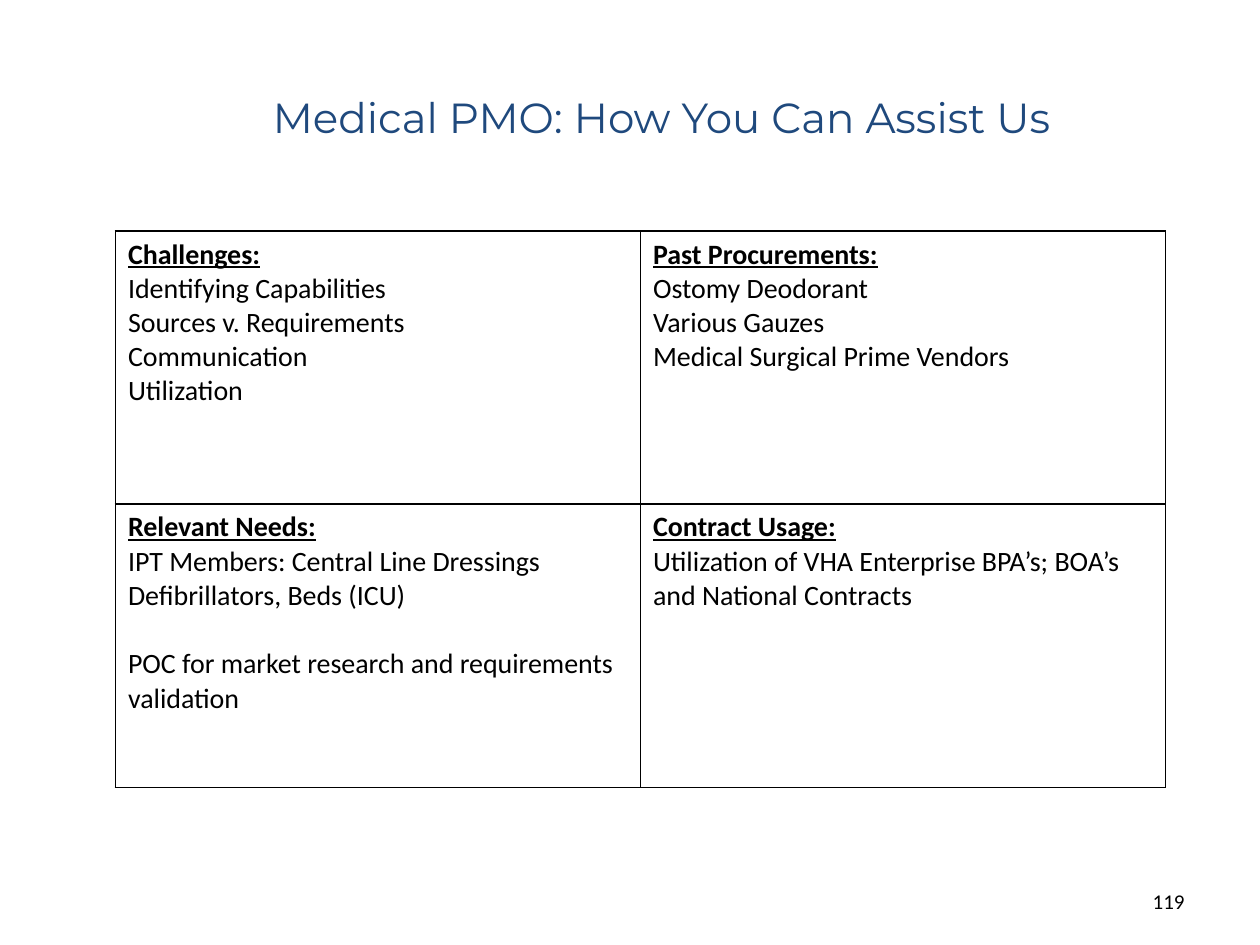
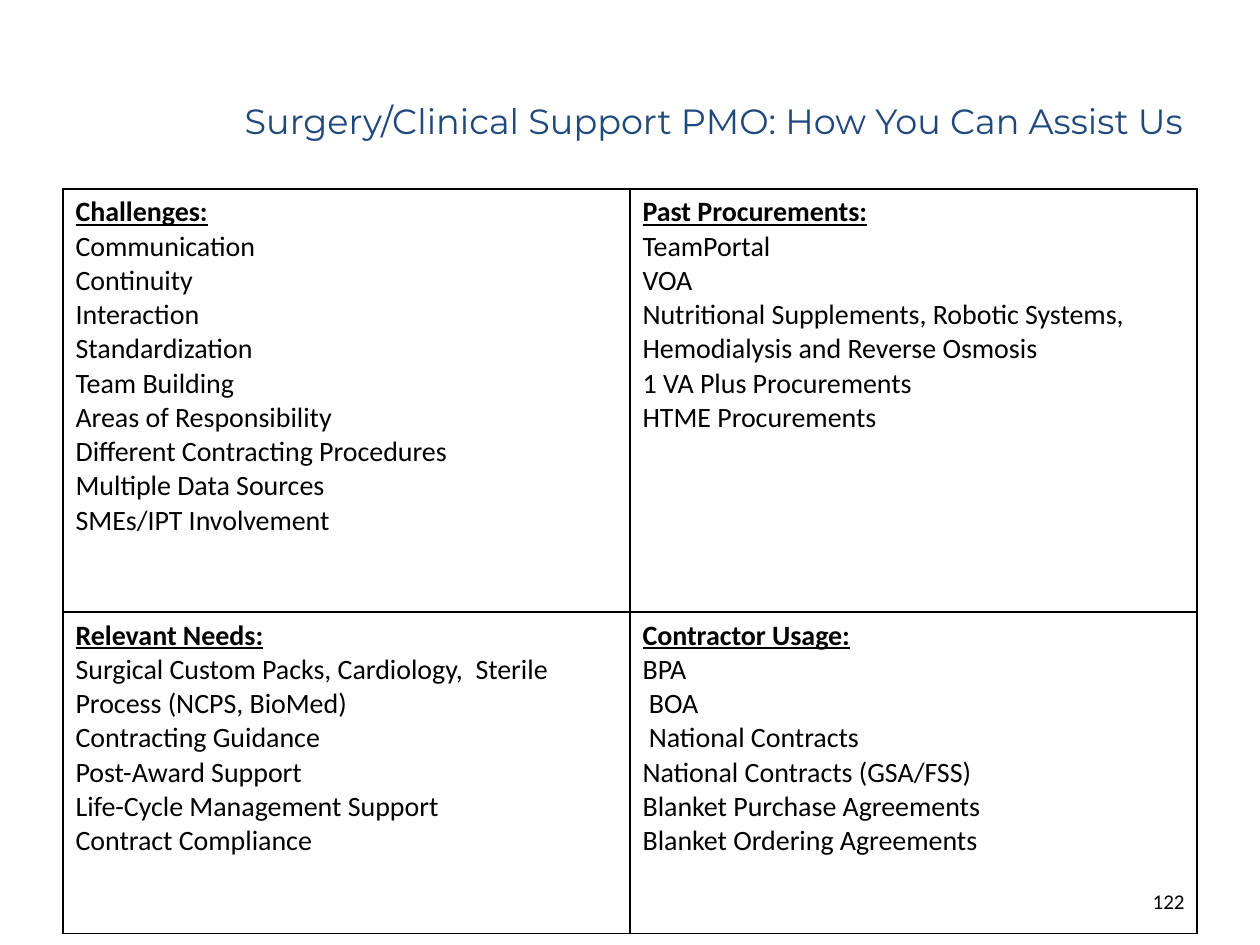
from dataclasses import dataclass

from lxml import etree
from pptx import Presentation
from pptx.dml.color import RGBColor
from pptx.enum.text import MSO_ANCHOR, PP_ALIGN
from pptx.oxml.ns import qn
from pptx.util import Inches, Pt

CENTER, RIGHT = PP_ALIGN.CENTER, PP_ALIGN.RIGHT
MIDDLE = MSO_ANCHOR.MIDDLE
COLORS = {"title": "1F497D", "text": "000000", "border": "000000"}
TITLE_FONT, BODY_FONT = "Montserrat", "Calibri"
TITLE_ONLY = 5
GRID_COLUMNS, GRID_ROWS = 120, 90
BODY_SIZE, NUMBER_SIZE = 16, 12
BORDER_WIDTH = Pt(1)


@dataclass
class Line:
    """A table line with its own indent (inches) or space before (points)."""
    text: str
    left: float = 0
    first: float = 0
    gap: float = 0


class Pages:
    """Holds the deck's style and the current page."""

    def __init__(self):
        self.deck = Presentation()
        self.deck.slide_width, self.deck.slide_height = Inches(10), Inches(7.5)
        self.page = None

    def place(self, left, top, width, height):
        column = self.deck.slide_width / GRID_COLUMNS
        row = self.deck.slide_height / GRID_ROWS
        return (round(left * column), round(top * row),
                round(width * column), round(height * row))

    def style(self, para, font, size, color, bold=False, underline=False):
        for span in para.runs:
            span.font.name, span.font.size = font, Pt(size)
            span.font.bold, span.font.underline = bold, underline
            span.font.color.rgb = RGBColor.from_string(COLORS[color])

    # Title placeholder, which also starts a page
    def title(self, text, left, top, size):
        self.page = self.deck.slides.add_slide(self.deck.slide_layouts[TITLE_ONLY])
        box = self.page.shapes.title
        box.left, box.top, box.width, box.height = self.place(left, top, 108, 15)
        frame = box.text_frame
        frame.text = text
        frame.vertical_anchor = MIDDLE
        frame.paragraphs[0].alignment = CENTER
        self.style(frame.paragraphs[0], TITLE_FONT, size, "title")

    # Page number in the lower right corner
    def number(self, text):
        box = self.page.shapes.add_textbox(*self.place(86, 83.4, 28, 4.8))
        frame = box.text_frame
        frame.word_wrap = True
        frame.text = text
        frame.vertical_anchor = MIDDLE
        frame.paragraphs[0].alignment = RIGHT
        self.style(frame.paragraphs[0], BODY_FONT, NUMBER_SIZE, "text")

    # Bordered table of two equal columns
    def quadrants(self, left, top, width, heights, cells):
        area = self.place(left, top, width, sum(heights))
        table = self.page.shapes.add_table(len(heights), 2, *area).table
        table.first_row = table.horz_banding = False
        for column in table.columns:
            column.width = area[2] // 2
        for row, height, contents in zip(table.rows, heights, cells):
            row.height = self.place(0, 0, 0, height)[3]
            for cell, (heading, *lines) in zip(row.cells, contents):
                self.border(cell)
                cell.fill.background()
                self.fill_cell(cell.text_frame, heading, lines)

    def fill_cell(self, frame, heading, lines):
        frame.text = heading
        self.style(frame.paragraphs[0], BODY_FONT, BODY_SIZE, "text", True, True)
        for item in lines:
            line = item if isinstance(item, Line) else Line(item)
            para = frame.add_paragraph()
            para.text = line.text
            if line.left:
                properties = para._p.get_or_add_pPr()
                properties.set("marL", str(Inches(line.left)))
                properties.set("indent", str(Inches(line.first)))
            if line.gap:
                para.space_before = Pt(line.gap)
            self.style(para, BODY_FONT, BODY_SIZE, "text")

    def border(self, cell):
        properties = cell._tc.get_or_add_tcPr()
        for side in ("lnL", "lnR", "lnT", "lnB"):
            edge = etree.SubElement(properties, qn(f"a:{side}"), w=str(BORDER_WIDTH))
            solid = etree.SubElement(edge, qn("a:solidFill"))
            etree.SubElement(solid, qn("a:srgbClr"), val=COLORS["border"])


def hanging(text):
    return Line(text, left=0.33, first=-0.33)


def nudged(text):
    return Line(text, left=0.05)


def main():
    pages = Pages()

    # Medical
    pages.title("Medical PMO: How You Can Assist Us", 9, 3.6, 24)
    pages.quadrants(11, 22, 100, (26, 27), [
        [["Challenges:", "Identifying Capabilities", "Sources v. Requirements",
          "Communication", "Utilization"],
         ["Past Procurements:", "Ostomy Deodorant", "Various Gauzes",
          "Medical Surgical Prime Vendors"]],
        [["Relevant Needs:", "IPT Members: Central Line Dressings",
          "Defibrillators, Beds (ICU)",
          Line("POC for market research and requirements validation", gap=19.5)],
         ["Contract Usage:",
          "Utilization of VHA Enterprise BPA’s; BOA’s and National Contracts"]],
    ])
    pages.number("119")

    # Surgery and clinical support
    pages.title("Surgery/Clinical Support PMO: How You Can Assist Us", 14, 4, 20)
    pages.quadrants(6, 18, 108, (40.3, 30.6), [
        [["Challenges:", "Communication", "Continuity", "Interaction",
          "Standardization", "Team Building",
          hanging("Areas of Responsibility"),
          hanging("Different Contracting Procedures"),
          hanging("Multiple Data Sources"),
          hanging("SMEs/IPT Involvement")],
         ["Past Procurements:", "TeamPortal", "VOA",
          "Nutritional Supplements, Robotic Systems, "
          "Hemodialysis and Reverse Osmosis",
          "1 VA Plus Procurements", "HTME Procurements"]],
        [["Relevant Needs:",
          "Surgical Custom Packs, Cardiology,  Sterile Process (NCPS, BioMed)",
          "Contracting Guidance", "Post-Award Support",
          "Life-Cycle Management Support", "Contract Compliance"],
         ["Contractor Usage:", "BPA", nudged("BOA"), nudged("National Contracts"),
          "National Contracts (GSA/FSS)", "Blanket Purchase Agreements",
          "Blanket Ordering Agreements"]],
    ])
    pages.number("122")

    pages.deck.save("out.pptx")


if __name__ == "__main__":
    main()
